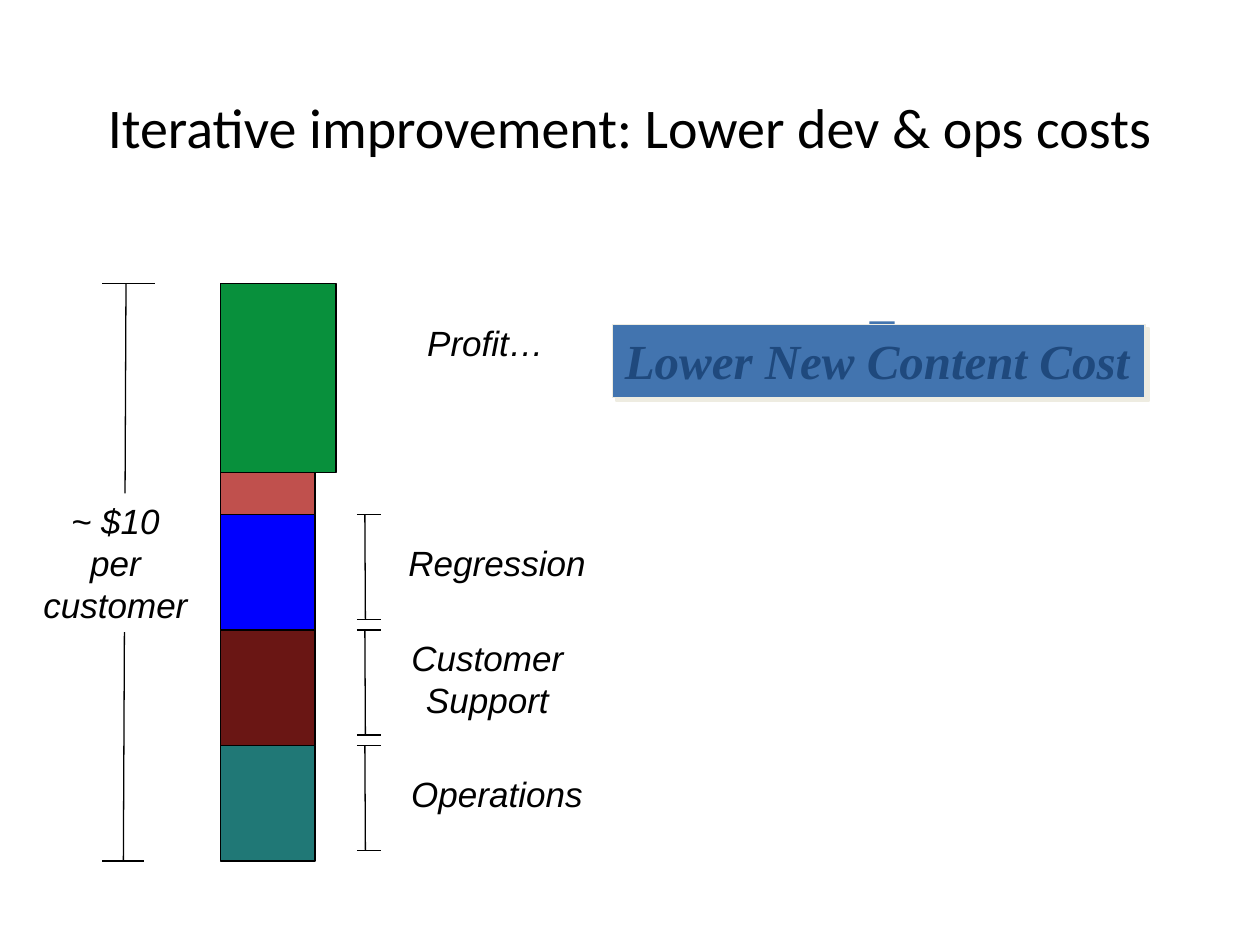
import dataclasses
import lxml.etree
import pptx
import pptx.dml.color
import pptx.enum.shapes
import pptx.enum.text
import pptx.oxml.ns
import pptx.util

Pt = pptx.util.Pt
qn = pptx.oxml.ns.qn
Align = pptx.enum.text.PP_ALIGN
Fit = pptx.enum.text.MSO_AUTO_SIZE


@dataclasses.dataclass(frozen=True)
class Theme:
    ink: str = "000000"
    paper: str = "FFFFFF"
    profit: str = "08903C"
    content: str = "C0504D"
    tests: str = "0000FF"
    support: str = "6A1614"
    ops: str = "207876"
    banner: str = "4274AF"
    navy: str = "1F497D"
    cream: str = "EEECE1"
    title: int = 32
    label: int = 20
    callout: int = 28


THEME = Theme()


def color(code):
    return pptx.dml.color.RGBColor.from_string(code)


def write(shape, text, size=THEME.label, font="Arial", ink=THEME.ink,
          bold=False, italic=True, align=Align.CENTER, wrap=False,
          anchor=pptx.enum.text.MSO_ANCHOR.TOP):
    frame = shape.text_frame
    frame.word_wrap = wrap
    frame.auto_size = Fit.NONE if wrap else Fit.SHAPE_TO_FIT_TEXT
    frame.vertical_anchor = anchor
    frame.text = text
    for para in frame.paragraphs:
        para.alignment = align
        style = para.font
        style.size, style.name = Pt(size), font
        style.bold, style.italic = bold, italic
        style.color.rgb = color(ink)


def label(slide, text, *box, **style):
    shape = slide.shapes.add_textbox(*map(Pt, box))
    write(shape, text, **style)


def block(parent, fill, *box, line=None):
    shape = parent.shapes.add_shape(
        pptx.enum.shapes.MSO_SHAPE.RECTANGLE, *map(Pt, box))
    shape.shadow.inherit = False
    shape.fill.solid()
    shape.fill.fore_color.rgb = color(fill)
    if line:
        shape.line.color.rgb = color(line)
        shape.line.width = Pt(1)
    else:
        shape.line.fill.background()
    return shape


def rule(parent, *ends):
    line = parent.shapes.add_connector(
        pptx.enum.shapes.MSO_CONNECTOR.STRAIGHT, *map(Pt, ends))
    line.line.color.rgb = color(THEME.ink)
    line.line.width = Pt(0.75)
    lxml.etree.SubElement(line._element.spPr, qn("a:effectLst"))


def bracket(slide, top, base, stem, foot, left, right, low):
    group = slide.shapes.add_group_shape()
    rule(group, stem, top, foot, base)
    rule(group, left, base, low, base)
    rule(group, left, top, right, top)
    return group


def shade(shape, code):
    effects = shape._element.spPr.find(qn("a:effectLst"))
    shadow = lxml.etree.SubElement(
        effects, qn("a:outerShdw"), dist=str(Pt(2.8)), dir="2700000",
        algn="ctr", rotWithShape="0")
    lxml.etree.SubElement(shadow, qn("a:srgbClr"), val=code)


def main():
    deck = pptx.Presentation()
    deck.slide_width, deck.slide_height = Pt(720), Pt(540)
    slide = deck.slides.add_slide(deck.slide_layouts[6])

    label(slide, "Iterative improvement: Lower dev & ops costs",
          36, 18, 648, 108, size=THEME.title, font="Calibri", italic=False,
          wrap=True, anchor=pptx.enum.text.MSO_ANCHOR.MIDDLE)

    for text, *box in (
        ("Profit…", 235.5, 180, 84, 31),
        ("Regression", 225, 306, 118, 31),
        ("Customer\nSupport", 226.5, 360, 104, 55.4),
        ("Operations", 226.5, 438, 115, 31),
    ):
        label(slide, text, *box)

    total = bracket(slide, 162, 492, 72, 70.5, 58.5, 88.5, 82.5)
    cost = block(total, THEME.paper, 16, 282, 100, 79.2)
    write(cost, "~ $10\nper\ncustomer")

    top = 162
    for fill, width, height, marked in (
        (THEME.profit, 66, 108, False),
        (THEME.content, 54, 24, False),
        (THEME.tests, 54, 66, True),
        (THEME.support, 54, 66, True),
        (THEME.ops, 54, 66, True),
    ):
        block(slide, fill, 126, top, width, height, line=THEME.ink)
        if marked:
            bracket(slide, top, top + height - 6, 208.5, 208.8,
                    204, 217.5, 217.5)
        top += height

    block(slide, THEME.banner, 496.8, 183.6, 14.4, 28.8)
    banner = block(slide, THEME.banner, 350, 185.4, 304.4, 41.8,
                   line=THEME.cream)
    shade(banner, THEME.cream)
    write(banner, "Lower New Content Cost", size=THEME.callout,
          font="Times New Roman", ink=THEME.navy, bold=True,
          align=Align.LEFT)

    deck.save("out.pptx")


if __name__ == "__main__":
    main()
